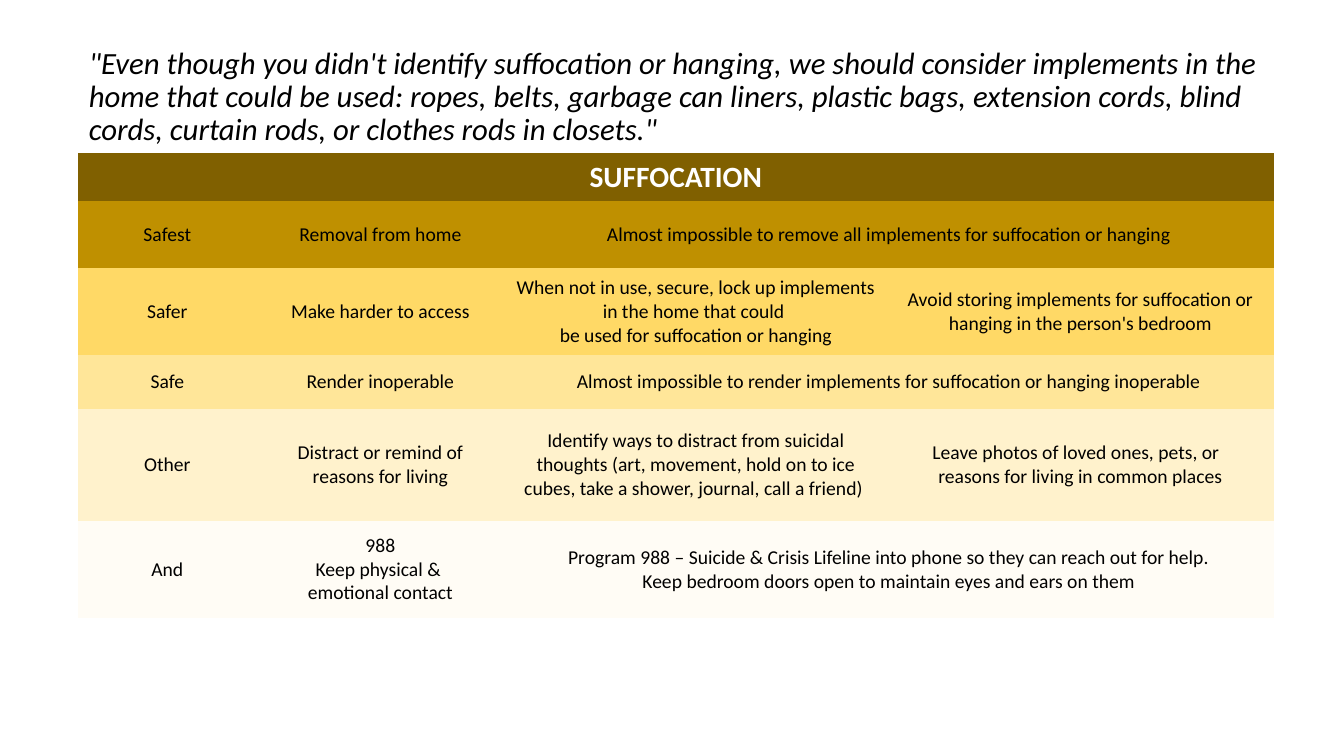
from pptx import Presentation
from pptx.dml.color import RGBColor
from pptx.enum import text
from pptx.util import Pt

QUOTE = (
    '"Even though you didn\'t identify suffocation or hanging, we should consider '
    "implements in the home that could be used: ropes, belts, garbage can liners, "
    "plastic bags, extension cords, blind cords, curtain rods, or clothes rods in "
    'closets."'
)
HEADING = "SUFFOCATION"

# Each row: fill name, height, cell texts; a row of three merges its last two columns
ROWS = [
    ("safest", 48.2, ["Safest", "Removal from home",
     "Almost impossible to remove all implements for suffocation or hanging"]),
    ("safer", 62.2, ["Safer", "Make harder to access",
     "When not in use, secure, lock up implements in the home that could \n"
     "be used for suffocation or hanging",
     "Avoid storing implements for suffocation or hanging in the person's bedroom"]),
    ("safe", 38.2, ["Safe", "Render inoperable",
     "Almost impossible to render implements for suffocation or hanging inoperable"]),
    ("other", 79.9, ["Other", "Distract or remind of reasons for living",
     "Identify ways to distract from suicidal thoughts (art, movement, hold on to "
     "ice cubes, take a shower, journal, call a friend) ",
     "Leave photos of loved ones, pets, or  \nreasons for living in common places"]),
    ("and", 69.8, ["And", "988\nKeep physical & \nemotional contact",
     "Program 988 – Suicide & Crisis Lifeline into phone so they can reach out for help.\n"
     "Keep bedroom doors open to maintain eyes and ears on them"]),
]
HEADING_HEIGHT = 33.8
COLUMN_WIDTHS = [127.4, 177.1, 273.6, 275.8]
COLORS = {
    "heading": "806000", "safest": "BF9000", "safer": "FFD966", "safe": "FFE699",
    "other": "FFF2CC", "and": "FFFCF5", "black": "000000", "white": "FFFFFF",
}
FONT = "Calibri"
PLAIN_STYLE = "{2D5ABB26-0587-4C30-8999-92F81FD0307C}"


def format_text(frame, size, color, align, bold=False, italic=False):
    for paragraph in frame.paragraphs:
        paragraph.alignment = align
        for run in paragraph.runs:
            run.font.name = FONT
            run.font.size = Pt(size)
            run.font.bold = bold
            run.font.italic = italic
            run.font.color.rgb = RGBColor.from_string(COLORS[color])


def fill_cell(cell, words, fill, size=14, color="black", bold=False,
              anchor=text.MSO_ANCHOR.MIDDLE):
    cell.fill.solid()
    cell.fill.fore_color.rgb = RGBColor.from_string(COLORS[fill])
    cell.vertical_anchor = anchor
    cell.text_frame.text = words
    format_text(cell.text_frame, size, color, text.PP_ALIGN.CENTER, bold)


presentation = Presentation()
presentation.slide_width, presentation.slide_height = Pt(960), Pt(540)
slide = presentation.slides.add_slide(presentation.slide_layouts[5])

# Quotation as the title
title = slide.shapes.title
title.left, title.top, title.width, title.height = Pt(56.2), Pt(28.8), Pt(853.9), Pt(81.4)
title.text_frame.text = QUOTE
title.text_frame.word_wrap = True
title.text_frame.auto_size = text.MSO_AUTO_SIZE.NONE
title.text_frame.vertical_anchor = text.MSO_ANCHOR.MIDDLE
title.text_frame.paragraphs[0].line_spacing = 0.9
format_text(title.text_frame, 22, "black", text.PP_ALIGN.LEFT, italic=True)

# Table without borders or banding
heights = [HEADING_HEIGHT] + [height for _, height, _ in ROWS]
frame = slide.shapes.add_table(
    len(heights), len(COLUMN_WIDTHS), Pt(55.8), Pt(109.6),
    Pt(sum(COLUMN_WIDTHS)), Pt(sum(heights)))
table = frame.table
table.first_row = table.horz_banding = False
table._tbl.tblPr.find("{*}tableStyleId").text = PLAIN_STYLE
for column, width in zip(table.columns, COLUMN_WIDTHS):
    column.width = Pt(width)
for row, height in zip(table.rows, heights):
    row.height = Pt(height)

# Heading row
last = len(COLUMN_WIDTHS) - 1
table.cell(0, 0).merge(table.cell(0, last))
fill_cell(table.cell(0, 0), HEADING, "heading", 21, "white", True, text.MSO_ANCHOR.BOTTOM)

# Safety levels
for row_number, (fill, _, words) in enumerate(ROWS, start=1):
    if len(words) == last:
        table.cell(row_number, last - 1).merge(table.cell(row_number, last))
    for column_number, cell_words in enumerate(words):
        fill_cell(table.cell(row_number, column_number), cell_words, fill)

presentation.save("out.pptx")
